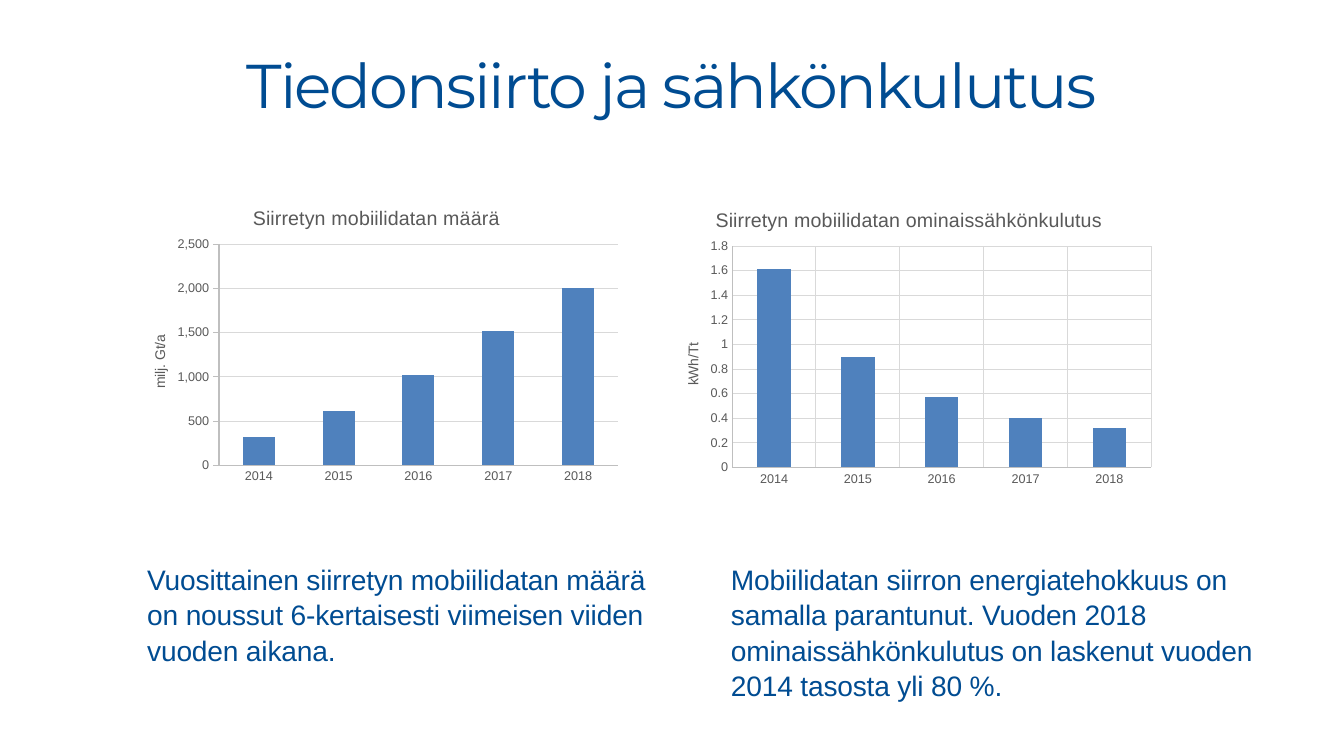
from pptx import Presentation
from pptx.chart.data import CategoryChartData as Data
from pptx.dml.color import RGBColor as RGB
from pptx.enum.chart import XL_CHART_TYPE as Kind, XL_TICK_MARK as Tick
from pptx.enum.text import MSO_ANCHOR as Anchor, MSO_AUTO_SIZE as Auto, PP_ALIGN as Align
from pptx.oxml.ns import qn
from pptx.oxml.xmlchemy import OxmlElement as Node
from pptx.util import Inches, Pt

BLUE, GREY, GRID, AXIS, BAR = "004C92", "595959", "D9D9D9", "BFBFBF", "4F81BD"
YEARS = ["2014", "2015", "2016", "2017", "2018"]

LEFT = {
    "title": "Siirretyn mobiilidatan määrä", "unit": "milj. Gt/a",
    "vals": [320, 610, 1020, 1520, 2000], "top": 2500, "step": 500,
    "form": "#,##0", "tick": Tick.OUTSIDE, "grid": False,
    "head": {"x": 0.25, "y": 0.05}, "side": {"x": 0.05, "y": 0.48},
    "plot": {"x": 0.19, "y": 0.19, "w": 0.79, "h": 0.73},
}
RIGHT = {
    "title": "Siirretyn mobiilidatan ominaissähkönkulutus", "unit": "kWh/Tt",
    "vals": [1.61, 0.9, 0.57, 0.4, 0.32], "top": 1.8, "step": 0.2,
    "form": "General", "tick": Tick.NONE, "grid": True,
    "head": {"x": 0.11, "y": 0.05}, "side": {"x": 0.05, "y": 0.5},
    "plot": {"x": 0.15, "y": 0.19, "w": 0.83, "h": 0.73},
}
NOTES = [
    "Vuosittainen siirretyn mobiilidatan määrä on noussut 6-kertaisesti "
    "viimeisen viiden vuoden aikana.",
    "Mobiilidatan siirron energiatehokkuus on samalla parantunut. Vuoden 2018 "
    "ominaissähkönkulutus on laskenut vuoden 2014 tasosta yli 80 %.",
]


def tint(color, code):
    """Give a colour object the hex value."""
    color.rgb = RGB.from_string(code)


def apply(item, form):
    """Set each attribute named in the format dict."""
    for key, val in form.items():
        setattr(item, key, val)


def style(font, size, code, face="Arial"):
    """Format a font."""
    apply(font, {"name": face, "size": Pt(size), "bold": False})
    tint(font.color, code)


def stroke(line, code):
    """Format a thin chart line."""
    line.width = Pt(0.75)
    tint(line.color, code)


def move(shape, box):
    """Place a shape in a box given in inches."""
    apply(shape, dict(zip(("left", "top", "width", "height"), map(Inches, box))))


def pin(elem, spot, index):
    """Fix a chart part at fractions of the chart area."""
    old = elem.find(qn("c:layout"))
    if old is not None:
        elem.remove(old)
    outer, inner = Node("c:layout"), Node("c:manualLayout")
    outer.append(inner)
    pairs = [("xMode", "edge"), ("yMode", "edge"), *spot.items()]
    if "w" in spot:
        pairs.insert(0, ("layoutTarget", "inner"))
    for tag, val in pairs:
        node = Node("c:" + tag)
        node.set("val", str(val))
        inner.append(node)
    elem.insert(index, outer)


def label(title, text, size, spot):
    """Write and place a chart or axis title."""
    para = title.text_frame.paragraphs[0]
    run = para.add_run()
    run.text = text
    style(run.font, size, GREY)
    pin(title._element, spot, 1)


def write(shape, text, size, face, gap):
    """Fill a placeholder with one blue run and return its paragraph."""
    frame = shape.text_frame
    apply(frame, {"auto_size": Auto.NONE, "word_wrap": True})
    para = frame.paragraphs[0]
    run = para.add_run()
    run.text = text
    style(run.font, size, BLUE, face)
    run._r.get_or_add_rPr().set("spc", str(gap))
    return para


def head(shape, box):
    """Set the slide title."""
    move(shape, box)
    para = write(shape, "Tiedonsiirto ja sähkönkulutus", 44.1, "Montserrat", -150)
    para.alignment = Align.CENTER
    sides = ("left", "top", "right", "bottom")
    apply(shape.text_frame, {"margin_" + side: 0 for side in sides})
    shape.text_frame.vertical_anchor = Anchor.BOTTOM


def note(shape, text, box):
    """Set the text below a chart."""
    move(shape, box)
    para = write(shape, text, 20.1, "Arial", -10)
    prop = para._p.get_or_add_pPr()
    prop.set("marL", str(Inches(0.39)))
    prop.set("indent", "0")
    prop.append(Node("a:buNone"))
    apply(para, {"level": 3, "space_before": Pt(0), "line_spacing": 1.05,
                 "alignment": Align.LEFT})
    shape.text_frame.vertical_anchor = Anchor.TOP


def graph(slide, info, box):
    """Draw a column chart in the box."""
    data = Data()
    data.categories = YEARS
    data.add_series("Series 1", info["vals"])
    chart = slide.shapes.add_chart(
        Kind.COLUMN_CLUSTERED, *map(Inches, box), data).chart
    style(chart.font, 10, "000000")
    apply(chart, {"has_legend": False, "has_title": True})
    label(chart.chart_title, info["title"], 14, info["head"])
    plot = chart.plots[0]
    apply(plot, {"gap_width": 150, "vary_by_categories": False})
    fill = plot.series[0].format.fill
    fill.solid()
    tint(fill.fore_color, BAR)
    cat, val = chart.category_axis, chart.value_axis
    apply(val, {"minimum_scale": 0, "maximum_scale": info["top"],
                "major_unit": info["step"], "has_title": True})
    apply(val.tick_labels, {"number_format": info["form"],
                            "number_format_is_linked": False})
    label(val.axis_title, info["unit"], 10, info["side"])
    for axis, tick, grid in ((cat, Tick.NONE, info["grid"]), (val, info["tick"], True)):
        apply(axis, {"major_tick_mark": tick, "minor_tick_mark": Tick.NONE,
                     "has_major_gridlines": grid})
        style(axis.tick_labels.font, 9, GREY)
        stroke(axis.format.line, AXIS)
        if grid:
            stroke(axis.major_gridlines.format.line, GRID)
    pin(chart._chartSpace.chart.plotArea, info["plot"], 0)


def main():
    """Build the slide."""
    deck = Presentation()
    apply(deck, {"slide_width": Inches(13.33), "slide_height": Inches(7.5)})
    slide = deck.slides.add_slide(deck.slide_layouts[3])
    title, *bodies = slide.placeholders
    head(title, (0.48, 0.2, 12.36, 1))
    for i, (body, text) in enumerate(zip(bodies, NOTES)):
        note(body, text, (0.97 + 5.79 * i, 5.51, 5.79, 1.31))
    graph(slide, LEFT, (1.22, 1.85, 5.01, 3.01))
    graph(slide, RIGHT, (6.51, 1.87, 5.01, 3.01))
    deck.save("out.pptx")


if __name__ == "__main__":
    main()
